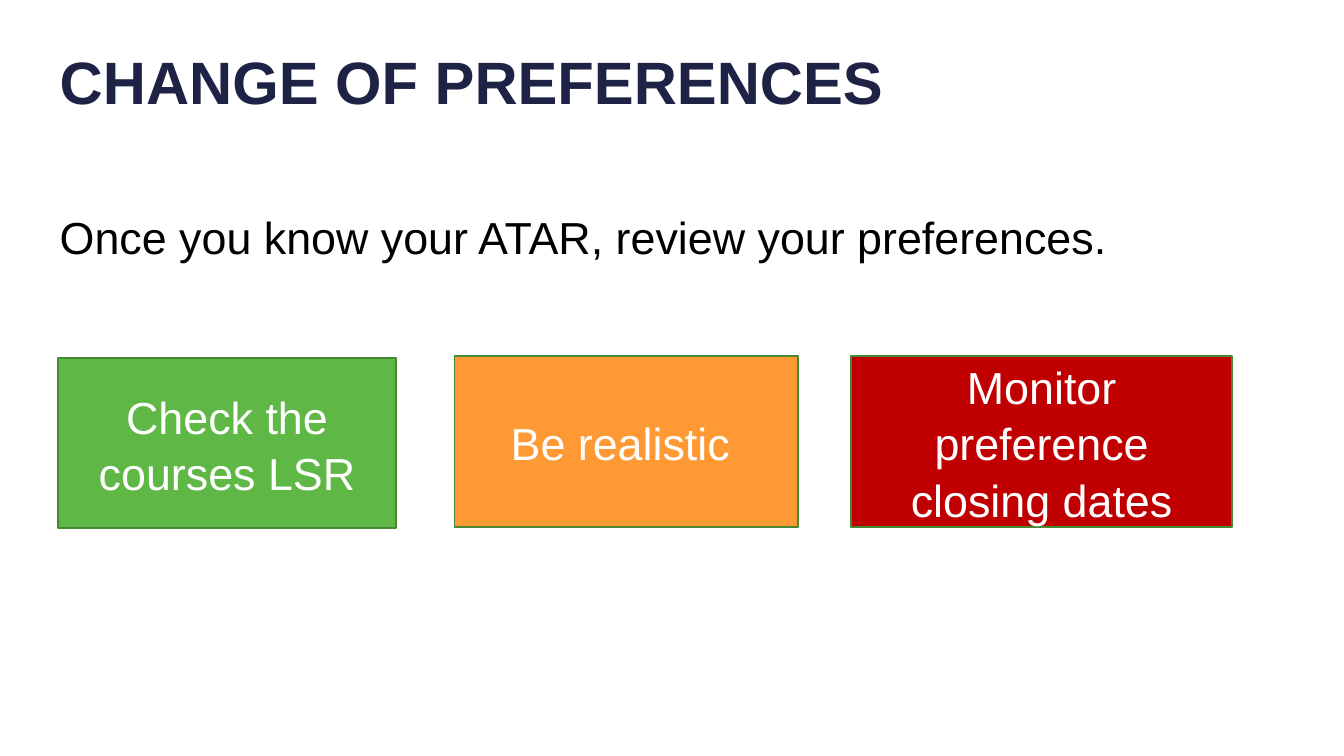
from dataclasses import dataclass

from pptx import Presentation
from pptx.dml.color import RGBColor
from pptx.enum.shapes import MSO_SHAPE
from pptx.enum.text import MSO_ANCHOR, PP_ALIGN
from pptx.util import Cm, Pt


@dataclass(frozen=True)
class Theme:
    font: str = "Arial"
    navy: str = "1E2245"
    black: str = "000000"
    white: str = "FFFFFF"
    green: str = "5FB846"
    orange: str = "FF9933"
    red: str = "C00000"
    outline: str = "468834"
    title_size: int = 32
    body_size: int = 24
    inset: float = 0.24


class SlideBuilder:
    def __init__(self, slide, theme):
        self.slide = slide
        self.theme = theme

    def fill_text(self, frame, words, size, color, bold=False, spacing=1.0,
                  align=PP_ALIGN.LEFT, anchor=MSO_ANCHOR.TOP):
        frame.word_wrap = True
        frame.vertical_anchor = anchor
        frame.margin_left = frame.margin_right = Cm(self.theme.inset)
        frame.margin_top = frame.margin_bottom = Cm(self.theme.inset)
        paragraph = frame.paragraphs[0]
        paragraph.alignment = align
        paragraph.line_spacing = spacing
        run = paragraph.add_run()
        run.text = words
        run.font.name = self.theme.font
        run.font.size = Pt(size)
        run.font.bold = bold
        run.font.color.rgb = RGBColor.from_string(color)

    def text(self, place, words, size, color, **style):
        box = self.slide.shapes.add_textbox(*map(Cm, place))
        self.fill_text(box.text_frame, words, size, color, **style)

    def card(self, place, words, fill):
        card = self.slide.shapes.add_shape(MSO_SHAPE.RECTANGLE, *map(Cm, place))
        card.shadow.inherit = False
        card.fill.solid()
        card.fill.fore_color.rgb = RGBColor.from_string(fill)
        card.line.color.rgb = RGBColor.from_string(self.theme.outline)
        card.line.width = Pt(1)
        self.fill_text(card.text_frame, words, self.theme.body_size, self.theme.white,
                       spacing=1.05, align=PP_ALIGN.CENTER, anchor=MSO_ANCHOR.MIDDLE)


def main():
    theme = Theme()
    deck = Presentation()
    deck.slide_width, deck.slide_height = Cm(25.4), Cm(14.28)
    builder = SlideBuilder(deck.slides.add_slide(deck.slide_layouts[6]), theme)

    builder.text((0.89, 3.73, 23.6, 1.6),
                 "Once you know your ATAR, review your preferences.",
                 theme.body_size, theme.black)
    builder.text((0.89, 0.76, 23.6, 2.77), "CHANGE OF PREFERENCES",
                 theme.title_size, theme.navy, bold=True, spacing=0.9)

    steps = [
        ("Check the courses LSR", theme.green, 6.4, 6.76),
        ("Be realistic ", theme.orange, 6.5, 6.73),
        ("Monitor preference closing dates", theme.red, 7.19, 6.73),
    ]
    first_left, pitch, height = 1.09, 7.5, 3.22
    for index, (advice, fill, width, top) in enumerate(steps):
        builder.card((first_left + index * pitch, top, width, height), advice, fill)

    deck.save("out.pptx")


if __name__ == "__main__":
    main()
